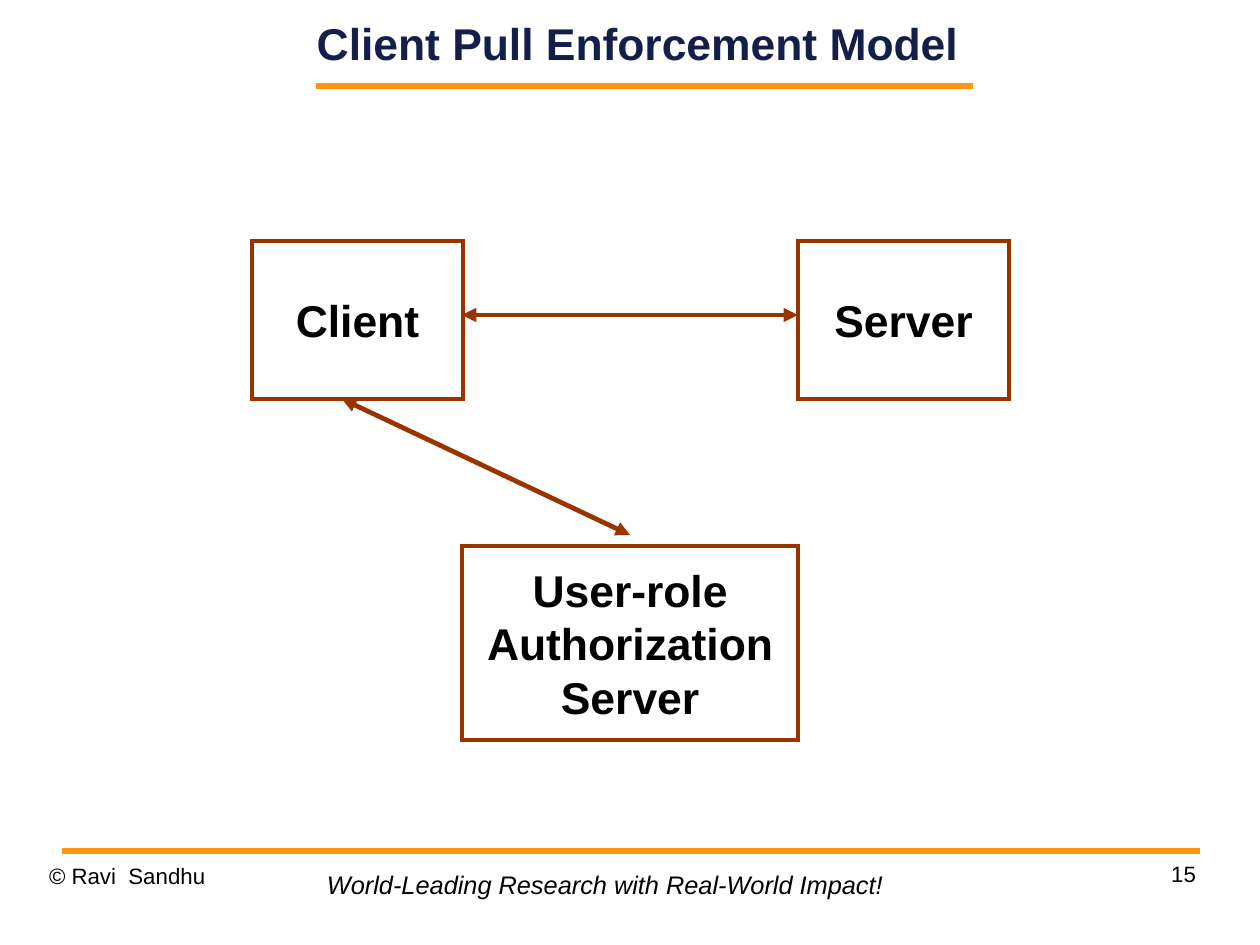
from pptx import Presentation
from pptx.dml.color import RGBColor
from pptx.enum.shapes import MSO_CONNECTOR, MSO_SHAPE
from pptx.enum.text import MSO_ANCHOR, PP_ALIGN
from pptx.oxml.ns import qn
from pptx.util import Pt
from lxml import etree

STRAIGHT = MSO_CONNECTOR.STRAIGHT
RECTANGLE = MSO_SHAPE.RECTANGLE
TOP, MIDDLE = MSO_ANCHOR.TOP, MSO_ANCHOR.MIDDLE
LEFT, CENTER, RIGHT = PP_ALIGN.LEFT, PP_ALIGN.CENTER, PP_ALIGN.RIGHT

PX = 8000  # EMU; the slide is 1260 by 945 px, or 28 by 21 cm

THEME = {
    "font": "Arial",
    "navy": RGBColor.from_string("131F49"),
    "black": RGBColor.from_string("000000"),
    "orange": RGBColor.from_string("FF950E"),
    "brown": RGBColor.from_string("993300"),
    "heading": Pt(28),
    "motto": Pt(16),
    "footer": Pt(14),
    "rule": Pt(4.31),
    "outline": Pt(3),
}

prs = Presentation()
prs.slide_width, prs.slide_height = 1260 * PX, 945 * PX
slide = prs.slides.add_slide(prs.slide_layouts[6])


def write(shape, lines, size, color="black", align=LEFT, anchor=TOP,
          inset=(0, 0), wrap=True, bold=False, italic=False, spacing=None):
    frame = shape.text_frame
    frame.word_wrap = wrap
    frame.vertical_anchor = anchor
    frame.margin_left = frame.margin_right = inset[0] * PX
    frame.margin_top = frame.margin_bottom = inset[1] * PX
    for i, line in enumerate(lines):
        paragraph = frame.paragraphs[0] if i == 0 else frame.add_paragraph()
        paragraph.alignment = align
        if spacing:
            paragraph.line_spacing = spacing
        run = paragraph.add_run()
        run.text = line
        run.font.name = THEME["font"]
        run.font.size = THEME[size]
        run.font.color.rgb = THEME[color]
        run.font.bold, run.font.italic = bold, italic


def draw_line(x1, y1, x2, y2, color, width, arrows=False):
    line = slide.shapes.add_connector(STRAIGHT, x1 * PX, y1 * PX, x2 * PX, y2 * PX)
    line.line.color.rgb = THEME[color]
    line.line.width = THEME[width]
    if arrows:
        outline = line.line._get_or_add_ln()
        for end in ("a:headEnd", "a:tailEnd"):
            etree.SubElement(outline, qn(end), type="triangle")
    etree.SubElement(line._element.spPr, qn("a:effectLst"))


# Rules under the title and above the footer
for left, right, y in ((316, 973, 86), (62, 1200, 851)):
    draw_line(left, y, right, y, "orange", "rule")

# Title
title = slide.shapes.add_textbox(316 * PX, 0, 655 * PX, 86 * PX)
write(title, ["Client Pull Enforcement Model "], "heading", "navy",
      CENTER, MIDDLE, bold=True)

# Footer: copyright, page number, motto
for text, left, top, align in (("© Ravi  Sandhu", 49, 862, LEFT),
                               ("15", 902, 860, RIGHT)):
    note = slide.shapes.add_textbox(left * PX, top * PX, 294 * PX, 65 * PX)
    write(note, [text], "footer", align=align, spacing=1.01)

motto = slide.shapes.add_textbox(316 * PX, 863 * PX, 581 * PX, 42 * PX)
write(motto, ["World-Leading Research with Real-World Impact!"], "motto",
      inset=(11, 6), wrap=False, italic=True)

# The three parties, with square corners
for lines, left, top, width, height in (
        (["Client"], 252, 241, 211, 158),
        (["Server"], 798, 241, 211, 158),
        (["User-role", "Authorization", "Server"], 462, 546, 336, 194)):
    party = slide.shapes.add_shape(RECTANGLE, left * PX, top * PX,
                                   width * PX, height * PX)
    party.shadow.inherit = False
    party.fill.background()
    party.line.color.rgb = THEME["brown"]
    party.line.width = THEME["outline"]
    etree.SubElement(party.line._get_or_add_ln(), qn("a:miter"), lim="800000")
    write(party, lines, "heading", align=CENTER, anchor=MIDDLE,
          inset=(13, 7), wrap=False, bold=True)

# Exchanges: client with server, authorization server with client
for ends in ((462, 315, 798, 315), (630, 535, 342, 399)):
    draw_line(*ends, "brown", "outline", arrows=True)

prs.save("out.pptx")
